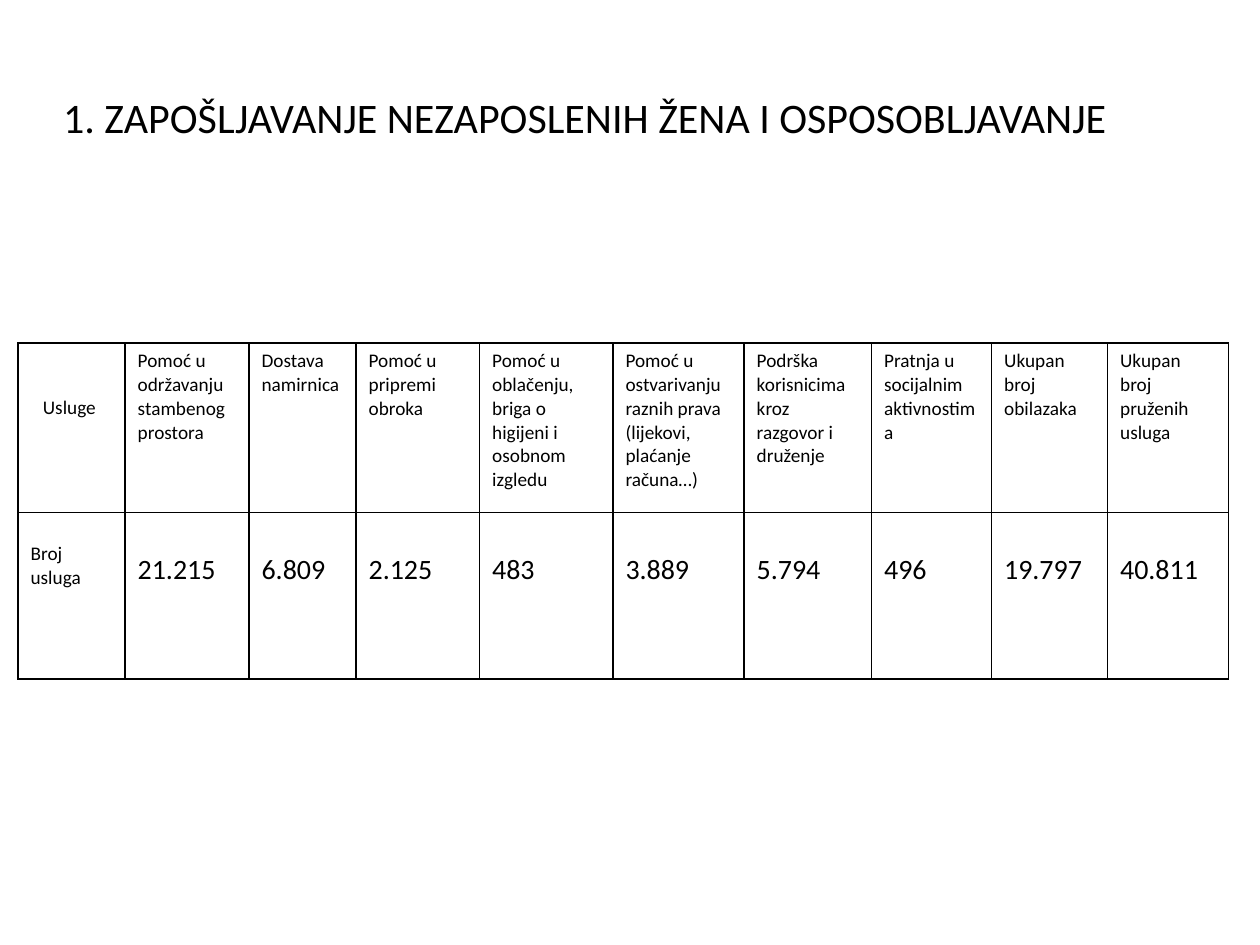
"""Build a slide with a title and a table of services provided."""
from lxml.etree import SubElement
from pptx import Presentation
from pptx.dml.color import RGBColor
from pptx.enum.text import MSO_ANCHOR as Anchor, PP_ALIGN as Align
from pptx.oxml.ns import qn
from pptx.util import Pt

TITLE = "1. ZAPOŠLJAVANJE NEZAPOSLENIH ŽENA I OSPOSOBLJAVANJE"
COLUMNS = [
    ("Usluge ", "Broj usluga", 61.2),
    ("Pomoć u održavanju stambenog prostora", "21.215", 70.8),
    ("Dostava namirnica", "6.809", 61.2),
    ("Pomoć u pripremi obroka", "2.125", 70.6),
    ("Pomoć u oblačenju, briga o higijeni i osobnom izgledu", "483", 76.2),
    ("Pomoć u ostvarivanju raznih prava (lijekovi, plaćanje računa…)", "3.889", 75),
    ("Podrška korisnicima kroz razgovor i druženje", "5.794", 72.8),
    ("Pratnja u socijalnim aktivnostima", "496", 68.6),
    ("Ukupan broj obilazaka", "19.797", 66.3),
    ("Ukupan broj pruženih usluga", "40.811", 69.2),
]
ROW_HEIGHTS = [97, 95]
LEFT, TABLE_TOP = 10.3, 196
BLACK, WHITE = "000000", "FFFFFF"
HEADER = {"size": 11, "top": 3.6}
CORNER = {"size": 11, "top": 30.5, "align": Align.CENTER}
ROW_LABEL = {"size": 11, "top": 17}
VALUE = {"size": 16, "top": 23.1}


def rgb(value):
    return RGBColor.from_string(value)


def write(tf, text, size, align=Align.LEFT):
    tf.word_wrap = True
    p = tf.paragraphs[0]
    p.alignment = align
    r = p.add_run()
    r.text = text
    r.font.color.rgb = rgb(BLACK)
    for name, value in {"name": "Calibri", "size": Pt(size), "bold": False}.items():
        setattr(r.font, name, value)


def add_borders(cell):
    tc_pr = cell._tc.get_or_add_tcPr()
    for side in ("lnL", "lnR", "lnT", "lnB"):
        ln = SubElement(tc_pr, qn(f"a:{side}"), w=str(Pt(1)))
        fill = SubElement(ln, qn("a:solidFill"))
        SubElement(fill, qn("a:srgbClr"), val=BLACK)


def fill_cell(cell, text, size, top, align=Align.LEFT):
    add_borders(cell)
    cell.fill.solid()
    cell.fill.fore_color.rgb = rgb(WHITE)
    cell.margin_top = Pt(top)
    write(cell.text_frame, text, size, align)


def main():
    prs = Presentation()
    prs.slide_width, prs.slide_height = Pt(720), Pt(540)
    s = prs.slides.add_slide(prs.slide_layouts[6])

    widths = [width for _, _, width in COLUMNS]
    frame = s.shapes.add_table(
        len(ROW_HEIGHTS), len(COLUMNS), Pt(LEFT), Pt(TABLE_TOP),
        Pt(sum(widths)), Pt(sum(ROW_HEIGHTS)))
    table = frame.table
    for row, height in zip(table.rows, ROW_HEIGHTS):
        row.height = Pt(height)
    for i, (header, value, width) in enumerate(COLUMNS):
        table.columns[i].width = Pt(width)
        fill_cell(table.cell(0, i), header, **(HEADER if i else CORNER))
        fill_cell(table.cell(1, i), value, **(VALUE if i else ROW_LABEL))

    sp = s.shapes.add_textbox(Pt(LEFT), Pt(21.6), Pt(648), Pt(90))
    sp.text_frame.vertical_anchor = Anchor.MIDDLE
    write(sp.text_frame, TITLE, 24, Align.CENTER)
    prs.save("out.pptx")


if __name__ == "__main__":
    main()
